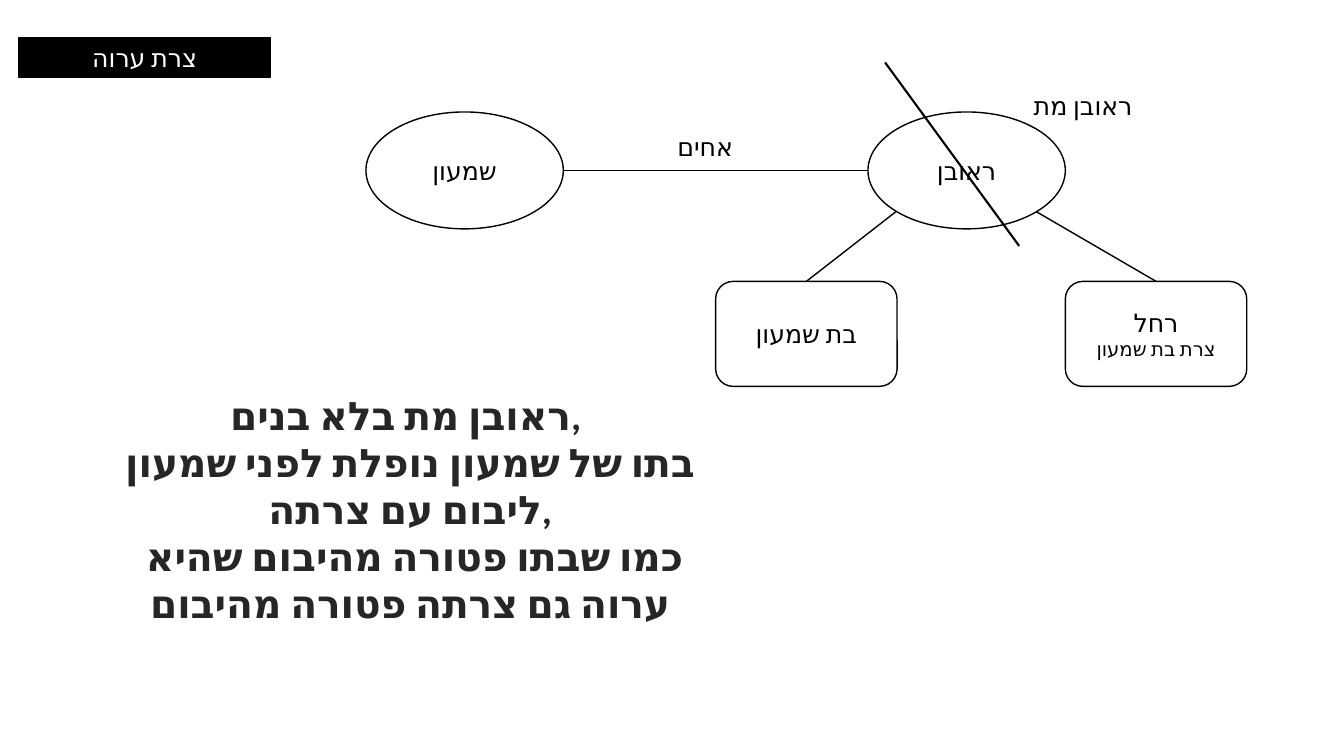
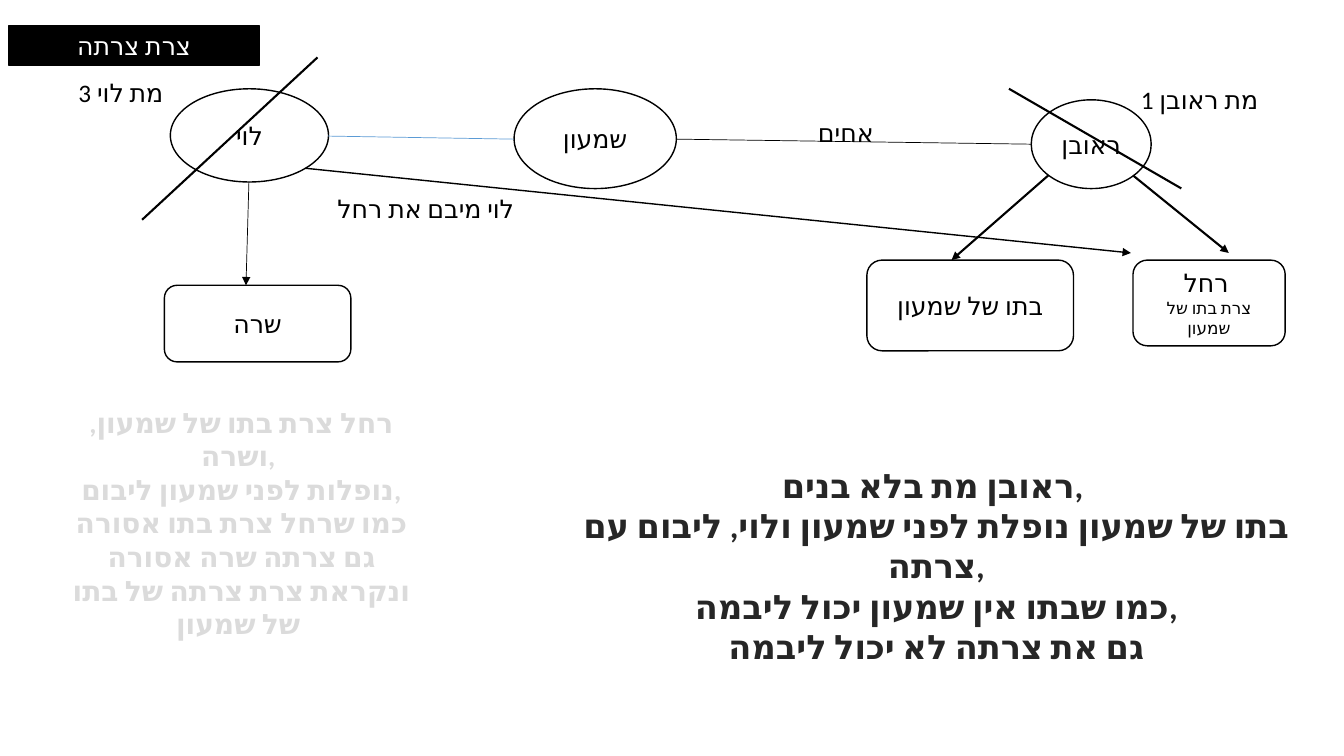
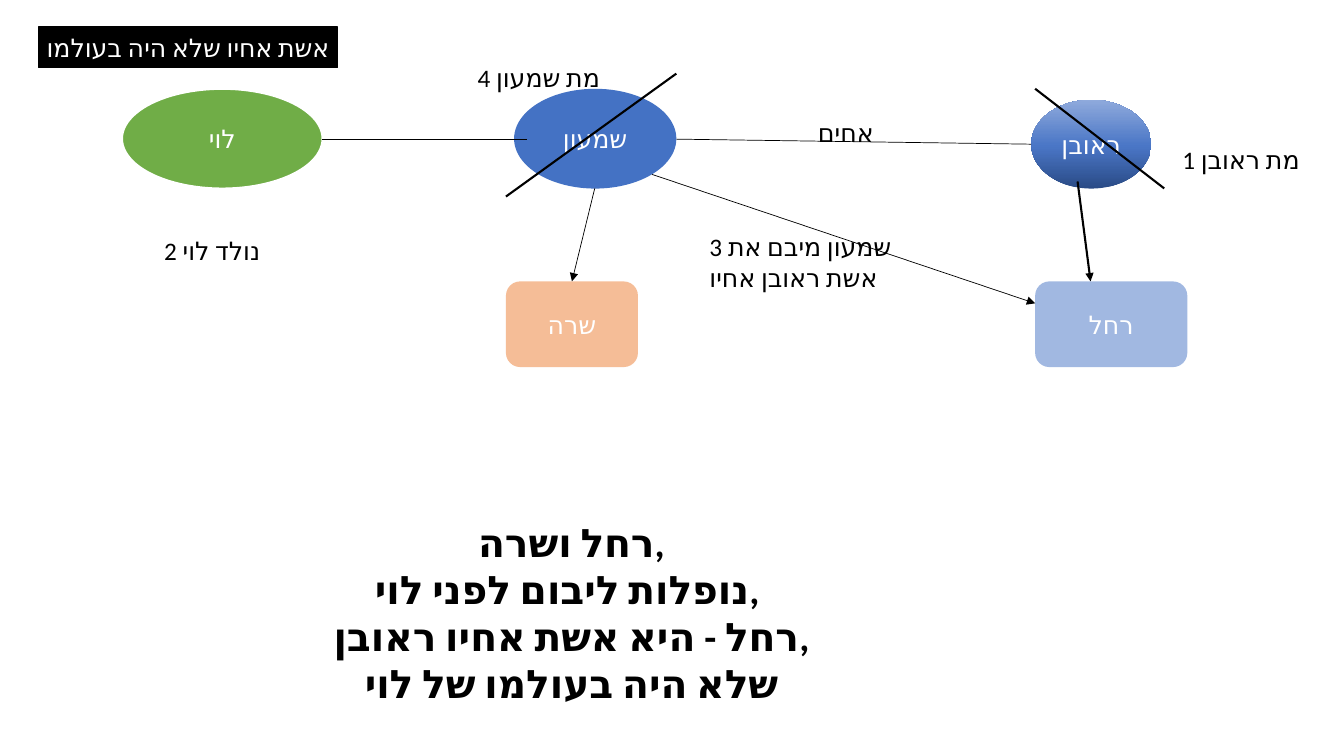
from lxml import etree
from pptx import Presentation
from pptx.dml.color import RGBColor
from pptx.enum.lang import MSO_LANGUAGE_ID
from pptx.enum.shapes import MSO_CONNECTOR, MSO_SHAPE
from pptx.enum.text import MSO_ANCHOR, MSO_AUTO_SIZE, PP_ALIGN
from pptx.oxml.ns import qn
from pptx.util import Pt

OVAL = MSO_SHAPE.OVAL
ROUND = MSO_SHAPE.ROUNDED_RECTANGLE
LINE = MSO_CONNECTOR.STRAIGHT
LEFT = PP_ALIGN.LEFT
MID = PP_ALIGN.CENTER
TOP = MSO_ANCHOR.TOP
CENTER = MSO_ANCHOR.MIDDLE
GROW = MSO_AUTO_SIZE.SHAPE_TO_FIT_TEXT
FIXED = MSO_AUTO_SIZE.NONE
HEBREW = MSO_LANGUAGE_ID.HEBREW

HEX = {
    "white": "FFFFFF", "black": "000000", "ink": "262626", "pale": "DBDBDB",
    "gray": "525252", "sky": "5B9BD5", "blue": "4472C4", "green": "70AD47",
    "orange": "ED7D31", "deep": "2A4B86", "mid": "4A76C6", "light": "8FAADC",
}
FONT = {"name": "Calibri", "language_id": HEBREW}
BAND = {
    "word_wrap": True, "auto_size": FIXED, "vertical_anchor": CENTER,
    "margin_left": 0, "margin_right": 0,
}
FADE = [(0, "deep"), (48, "mid"), (100, "light")]
SIDE_TOP = 0
ROW = 29


def rgb(tone):
    return RGBColor.from_string(HEX[tone])


def points(*nums):
    return [Pt(num) for num in nums]


def apply(item, form):
    for key, val in form.items():
        setattr(item, key, val)


def write(shape, rows, tone="black", sizes=(18,), align=MID, bold=False, edge=None):
    frame = shape.text_frame
    for num, text in enumerate(rows):
        par = frame.paragraphs[0] if num == 0 else frame.add_paragraph()
        par.alignment = align
        run = par.add_run()
        run.text = text
        size = sizes[min(num, len(sizes) - 1)]
        apply(run.font, {**FONT, "size": Pt(size), "bold": bold})
        run.font.color.rgb = rgb(tone)
        props = run.font._element
        etree.SubElement(props, qn("a:cs"), typeface=FONT["name"])
        if edge:
            hue, width = edge
            line = etree.Element(qn("a:ln"), w=str(Pt(width)))
            fill = etree.SubElement(line, qn("a:solidFill"))
            etree.SubElement(fill, qn("a:srgbClr"), val=HEX[hue])
            props.insert(0, line)


def paint(shape, fill, line=None, width=1, alpha=None):
    shape.fill.solid()
    shape.fill.fore_color.rgb = rgb(fill)
    if alpha:
        color = shape._element.spPr.find(".//" + qn("a:srgbClr"))
        etree.SubElement(color, qn("a:alpha"), val=str(alpha * 1000))
    if line:
        shape.line.color.rgb = rgb(line)
        shape.line.width = Pt(width)
    else:
        shape.line.fill.background()


def fade(shape):
    shape.fill.gradient()
    shape.fill.gradient_angle = 90
    stops = shape._element.spPr.find(".//" + qn("a:gsLst"))
    for stop in list(stops):
        stops.remove(stop)
    for pos, tone in FADE:
        stop = etree.SubElement(stops, qn("a:gs"), pos=str(pos * 1000))
        etree.SubElement(stop, qn("a:srgbClr"), val=HEX[tone])


def node(slide, kind, box, rows, fill="white", line="black", width=1,
         alpha=None, tone="black", sizes=(18,)):
    shape = slide.shapes.add_shape(kind, *points(*box))
    shape.shadow.inherit = False
    paint(shape, fill, line, width, alpha)
    apply(shape.text_frame, {"word_wrap": True, "vertical_anchor": CENTER})
    write(shape, rows, tone, sizes)
    return shape


def label(slide, box, rows, **form):
    shape = slide.shapes.add_textbox(*points(*box))
    apply(shape.text_frame, {"word_wrap": True, "auto_size": GROW, "vertical_anchor": TOP})
    write(shape, rows, **form)


def link(slide, start, end, width=0.5, tone="black", arrow=False, join=None):
    line = slide.shapes.add_connector(LINE, *points(*start, *end))
    line.line.color.rgb = rgb(tone)
    line.line.width = Pt(width)
    if arrow:
        etree.SubElement(line.line._get_or_add_ln(), qn("a:tailEnd"), type="triangle")
    etree.SubElement(line._element.spPr, qn("a:effectLst"))
    if join:
        line.end_connect(join, SIDE_TOP)


def start(deck, text, left, top, width):
    slide = deck.slides.add_slide(deck.slide_layouts[5])
    title = slide.shapes.title
    box = points(left, top, width, ROW)
    apply(title, dict(zip(("left", "top", "width", "height"), box)))
    apply(title.text_frame, BAND)
    paint(title, "black", "black")
    write(title, [text], "white")
    return slide


def pair(slide, **form):
    first = node(slide, OVAL, (736.6, 71.3, 85.7, 63.4), ["ראובן"], **form)
    node(slide, OVAL, (367.2, 63.4, 115.9, 71.3), ["שמעון"], **form)
    link(slide, (483.1, 99.4), (736.6, 103))
    label(slide, (550.8, 80, 106.6, ROW), ["אחים"])
    return first


def rival(deck):
    slide = start(deck, "צרת ערוה", 13.7, 26.6, 179.3)
    for left, name in ((620, "ראובן"), (261.4, "שמעון")):
        node(slide, OVAL, (left, 80, 141, 83.5), [name])
    link(slide, (402.4, 121.7), (620, 121.7))
    label(slide, (454.3, 90, 98.6, ROW), ["אחים"])
    wives = (
        (761, 740.2, ["רחל", "צרת בת שמעון"]),
        (511.2, 640, ["בת שמעון"]),
    )
    for left, root, rows in wives:
        box = node(slide, ROUND, (left, 201, 129.6, 75), rows, sizes=(18, 14))
        link(slide, (root, 151.2), (left + 64.8, 201), 1, join=box)
    link(slide, (632.2, 44.6), (728, 175.7), 1.5)
    label(slide, (710.6, 61.2, 126, ROW), ["ראובן מת"])
    label(slide, (69.8, 275.8, 446.4, 198.7), [
        "ראובן מת בלא בנים, ",
        "בתו של שמעון נופלת לפני שמעון ליבום עם צרתה,",
        " כמו שבתו פטורה מהיבום שהיא ערוה גם צרתה פטורה מהיבום",
    ], tone="ink", sizes=(28,), bold=True, edge=("white", 1.06))


def second(deck):
    slide = start(deck, "צרת צרתה", 6.5, 18, 178.6)
    pair(slide)
    link(slide, (809.3, 125.3), (877.7, 180.7), 1.5, arrow=True)
    link(slide, (748.8, 125.3), (679.7, 185.8), 1.5, arrow=True)
    node(slide, ROUND, (809.3, 185.8, 108.7, 61.2), ["רחל ", "צרת בתו של שמעון"], sizes=(18, 12))
    node(slide, ROUND, (619.2, 185.8, 147.6, 64.8), ["בתו של שמעון"])
    label(slide, (380.9, 328.3, 576, 123.8), [
        "ראובן מת בלא בנים, ",
        "בתו של שמעון נופלת לפני שמעון ולוי, ליבום עם צרתה,",
        " כמו שבתו אין שמעון יכול ליבמה, ",
        "גם את צרתה לא יכול ליבמה",
    ], tone="ink", sizes=(24,), bold=True, edge=("white", 1.06))
    link(slide, (720.7, 63.4), (843.8, 134.6), 1.5)
    label(slide, (807.8, 56.9, 104, ROW), ["1 מת ראובן"], align=LEFT)
    node(slide, OVAL, (121.7, 63.4, 113, 66.6), ["לוי"])
    link(slide, (234.4, 97.2), (367.2, 99.4), tone="sky")
    link(slide, (218.2, 120.2), (807.8, 180.7), 1, arrow=True)
    label(slide, (234, 134.6, 152, ROW), ["לוי מיבם את רחל"], align=LEFT)
    link(slide, (226.8, 41), (101.5, 157), 1.5)
    label(slide, (49, 51.8, 80, ROW), ["3 מת לוי"], align=LEFT)
    link(slide, (177.8, 130), (175.7, 203.8), arrow=True)
    node(slide, ROUND, (117.4, 203.8, 133.2, 54.7), ["שרה"])
    label(slide, (33.8, 285.8, 277.2, 152.6), [
        "רחל צרת בתו של שמעון, ושרה, ",
        "נופלות לפני שמעון ליבום,",
        "כמו שרחל צרת בתו אסורה גם צרתה שרה אסורה",
        "ונקראת צרת צרתה של בתו של שמעון ",
    ], tone="pale", sizes=(20,), bold=True, edge=("gray", 1))


def widow(deck):
    slide = start(deck, "אשת אחיו שלא היה בעולמו", 27.4, 19.4, 213.8)
    plain = {"line": None, "tone": "white"}
    fade(pair(slide, fill="blue", **plain))
    link(slide, (769.7, 129.6), (779, 201), 1.5, arrow=True)
    node(slide, ROUND, (739.4, 201, 108.7, 61.2), ["רחל"], fill="blue", alpha=50, **plain)
    link(slide, (739.4, 63.4), (831.6, 134.6), 1.5)
    label(slide, (837.4, 99.4, 104, ROW), ["1 מת ראובן"], align=LEFT)
    node(slide, OVAL, (87.1, 63.4, 143.3, 71.3), ["לוי"],
         fill="green", line="white", width=1.5, tone="white")
    link(slide, (229.7, 99.4), (376.6, 99.4))
    label(slide, (110.2, 164.2, 120.2, ROW), ["2 נולד לוי"], align=LEFT)
    link(slide, (465.8, 124.6), (739.4, 216.7), arrow=True)
    label(slide, (499.7, 162, 157.7, 51), ["3 שמעון מיבם את אשת ראובן אחיו"], align=LEFT)
    sara = node(slide, ROUND, (361.4, 201, 94.3, 61.2), ["שרה"], fill="orange", alpha=50, **plain)
    link(slide, (424.8, 134.6), (408.6, 201), arrow=True, join=sara)
    link(slide, (483.1, 52.6), (361.4, 140.4), 1.5)
    label(slide, (334, 41, 106, ROW), ["4 מת שמעון"], align=LEFT)
    label(slide, (182.9, 366.5, 450.7, 143.3), [
        "רחל ושרה,",
        "נופלות ליבום לפני לוי, ",
        "רחל - היא אשת אחיו ראובן,",
        "שלא היה בעולמו של לוי",
    ], sizes=(28,), bold=True, edge=("white", 0.75))


def main():
    deck = Presentation()
    apply(deck, {"slide_width": Pt(960), "slide_height": Pt(540)})
    for build in (rival, second, widow):
        build(deck)
    deck.save("out.pptx")


if __name__ == "__main__":
    main()
